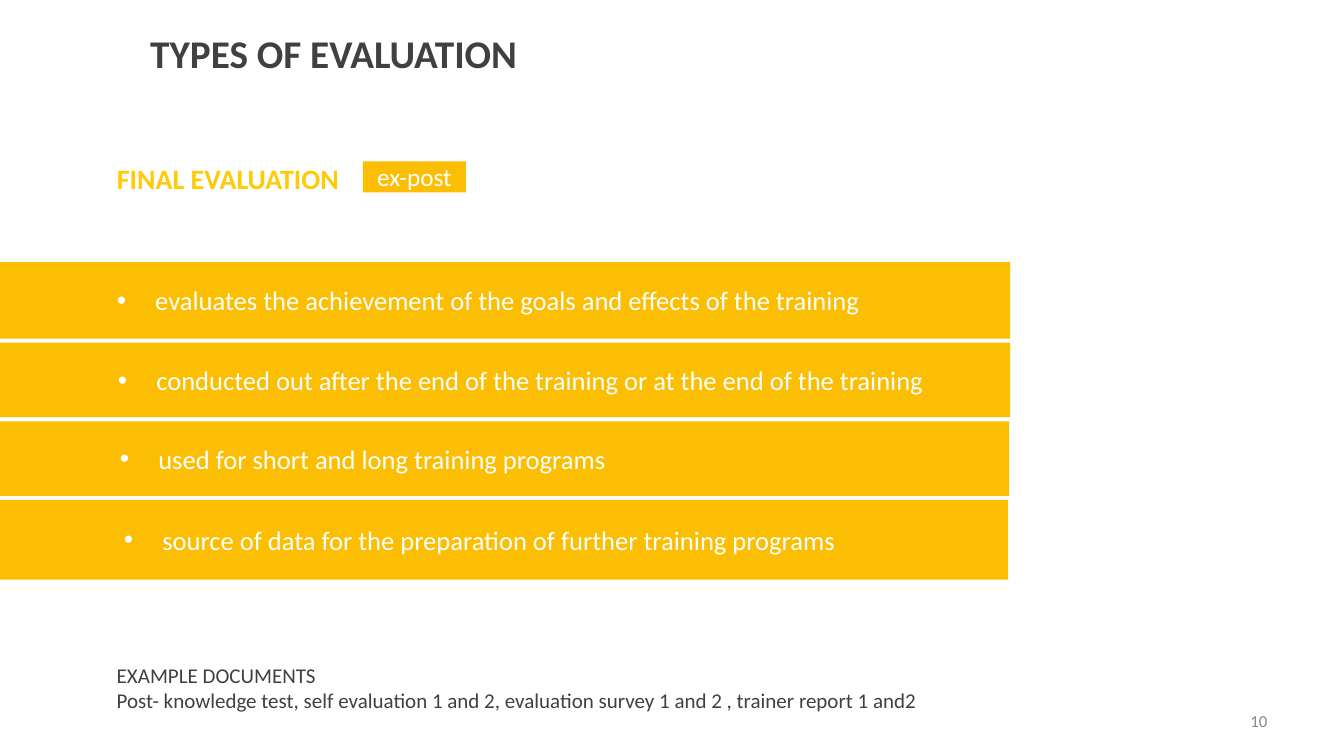
from lxml.etree import SubElement
from pptx import Presentation
from pptx.dml.color import RGBColor
from pptx.enum.shapes import MSO_SHAPE
from pptx.enum.text import MSO_ANCHOR, MSO_AUTO_SIZE, PP_ALIGN
from pptx.oxml.ns import qn
from pptx.util import Inches, Pt

GOLD, YELLOW, WHITE = "FBBE03", "FFCA08", "FFFFFF"
DARK, GRAY = "404040", "898989"

# Wording, width, height, side inset and top inset of each band
BANDS = [
    ("evaluates the achievement of the goals and effects of the training",
     10.02, 0.76, 0.06, 0.04),
    ("conducted out after the end of the training or at the end of the training",
     10.02, 0.74, 0.07, 0.05),
    ("used for short and long training programs", 10.01, 0.74, 0.09, 0.06),
    ("source of data for the preparation of further training programs",
     10, 0.79, 0.13, 0.1),
]
BAND_TOP, BAND_GAP = 2.6, 0.04


def color(code):
    return RGBColor.from_string(code)


def bullet(para, left, hang):
    """Give a paragraph a round bullet with a hanging indent, in inches."""
    props = para._p.get_or_add_pPr()
    props.set("marL", str(Inches(left)))
    props.set("indent", str(-Inches(hang)))
    SubElement(props, qn("a:buFont")).set("typeface", "Arial")
    SubElement(props, qn("a:buChar")).set("char", "•")


def write(shape, text, size, ink, bold=False, align=PP_ALIGN.LEFT,
          anchor=MSO_ANCHOR.TOP, inset=(0.1, 0.05), bullets=False, font="Calibri"):
    """Fill a shape with text, one paragraph to a line."""
    frame = shape.text_frame
    frame.word_wrap = True
    frame.auto_size = MSO_AUTO_SIZE.NONE
    frame.vertical_anchor = anchor
    frame.margin_left = frame.margin_right = Inches(inset[0])
    frame.margin_top = frame.margin_bottom = Inches(inset[1])
    frame.text = text
    for para in frame.paragraphs:
        para.alignment = align
        if bullets:
            bullet(para, 1.48, 0.38)
        for run in para.runs:
            run.font.name = font
            run.font.size = Pt(size)
            run.font.bold = bold
            run.font.color.rgb = color(ink)


class Page:
    """The current slide and its elements."""

    def __init__(self, deck):
        self.slide = deck.slides.add_slide(deck.slide_layouts[5])

    def title(self, text, box):
        shape = self.slide.shapes.title
        shape.left, shape.top, shape.width, shape.height = map(Inches, box)
        write(shape, text, 28, DARK, bold=True, anchor=MSO_ANCHOR.MIDDLE)

    def text(self, text, box, size, ink, **style):
        shape = self.slide.shapes.add_textbox(*map(Inches, box))
        write(shape, text, size, ink, **style)

    def block(self, text, box, size, **style):
        shape = self.slide.shapes.add_shape(MSO_SHAPE.RECTANGLE, *map(Inches, box))
        shape.shadow.inherit = False
        shape.fill.solid()
        shape.fill.fore_color.rgb = color(GOLD)
        shape.line.fill.background()
        write(shape, text, size, WHITE, anchor=MSO_ANCHOR.MIDDLE, **style)


def main():
    deck = Presentation()
    deck.slide_width, deck.slide_height = Inches(13.33), Inches(7.5)
    page = Page(deck)
    page.title("TYPES OF EVALUATION", (1.39, 0.21, 9.45, 0.62))
    page.text("FINAL EVALUATION", (1.06, 1.55, 6.61, 0.44), 20, YELLOW, bold=True)
    page.block("ex-post", (3.6, 1.6, 1.02, 0.31), 18, align=PP_ALIGN.CENTER)

    top = BAND_TOP
    for text, width, height, side, edge in BANDS:
        page.block(text, (0, top, width, height), 19, inset=(side, edge), bullets=True)
        top += height + BAND_GAP

    page.text("EXAMPLE DOCUMENTS\nPost- knowledge test, self evaluation 1 and 2, "
              "evaluation survey 1 and 2 , trainer report 1 and2",
              (1.06, 6.52, 9, 0.61), 15, DARK)
    page.text("10", (9.56, 6.95, 3.11, 0.4), 12, GRAY,
              align=PP_ALIGN.RIGHT, anchor=MSO_ANCHOR.MIDDLE)
    deck.save("out.pptx")


if __name__ == "__main__":
    main()
